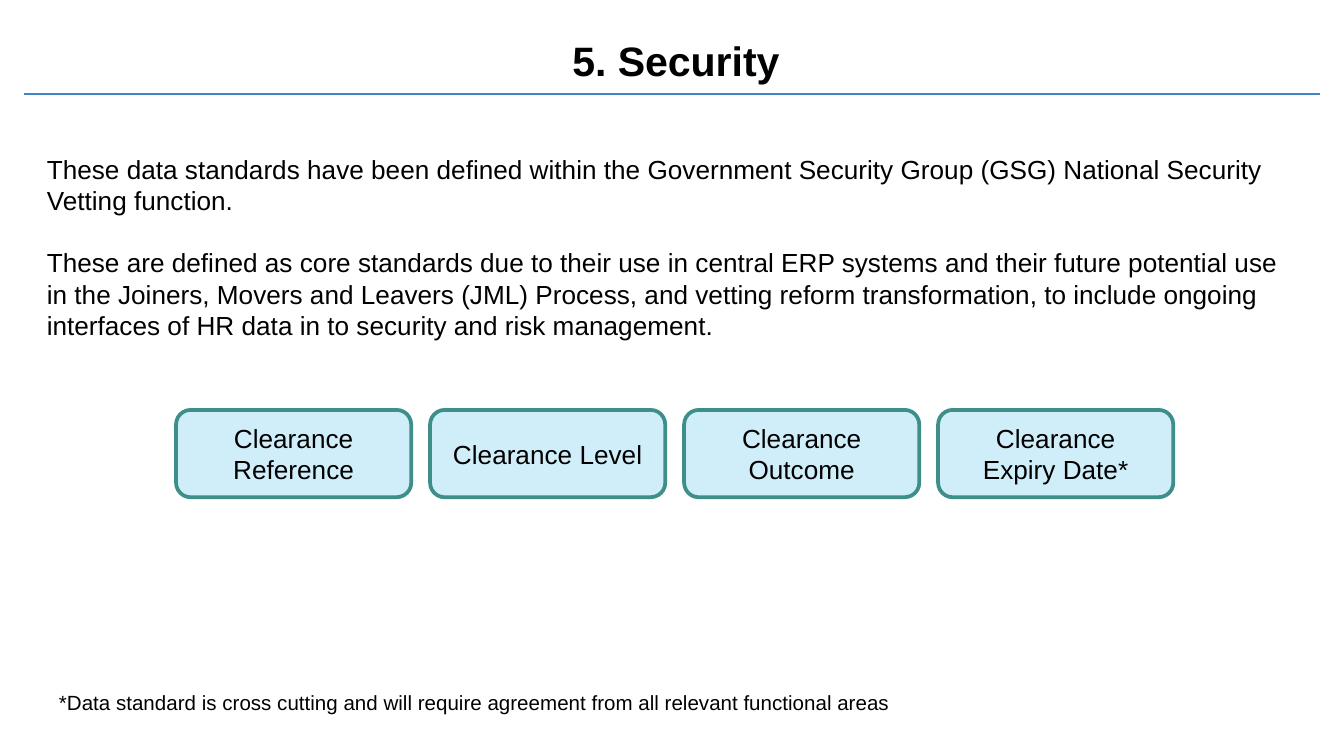
from lxml.etree import SubElement
from pptx import Presentation
from pptx.dml.color import RGBColor
from pptx.enum.shapes import MSO_CONNECTOR as Connector, MSO_SHAPE as Shape
from pptx.enum.text import MSO_ANCHOR as Anchor, PP_ALIGN as Align
from pptx.oxml.ns import qn
from pptx.util import Inches, Pt

BLACK, RULE_BLUE = "000000", "3D85C6"
CARD_FILL, CARD_EDGE = "D0EEF9", "3E8E8A"

INTRO = [
    "These data standards have been defined within the Government Security "
    "Group (GSG) National Security Vetting function.",
    "These are defined as core standards due to their use in central ERP "
    "systems and their future potential use in the Joiners, Movers and Leavers "
    "(JML) Process, and vetting reform transformation, to include ongoing "
    "interfaces of HR data in to security and risk management.",
]
FOOTNOTE = ("*Data standard is cross cutting and will require agreement from "
            "all relevant functional areas")
STANDARDS = ["Clearance Reference", "Clearance Level",
             "Clearance Outcome", "Clearance Expiry Date*"]


def color(hex_code):
    return RGBColor.from_string(hex_code)


def write(frame, paragraphs, size, align=Align.LEFT, anchor=Anchor.TOP,
          margins=(0.1, 0.1), bold=False, gap=0):
    side, edge = (Inches(margin) for margin in margins)
    frame_format = {"word_wrap": True, "vertical_anchor": anchor,
                    "margin_left": side, "margin_right": side,
                    "margin_top": edge, "margin_bottom": edge}
    for name, value in frame_format.items():
        setattr(frame, name, value)
    font_format = {"name": "Arial", "size": Pt(size), "bold": bold}
    for index, text in enumerate(paragraphs):
        paragraph = frame.add_paragraph() if index else frame.paragraphs[0]
        paragraph.alignment = align
        if index:
            paragraph.space_before = Pt(gap)
        run = paragraph.add_run()
        run.text = text
        for name, value in font_format.items():
            setattr(run.font, name, value)
        run.font.color.rgb = color(BLACK)


def add_text(slide, box, paragraphs, size, **options):
    textbox = slide.shapes.add_textbox(*map(Inches, box))
    write(textbox.text_frame, paragraphs, size, **options)


def add_rule(slide, left, right, y):
    rule = slide.shapes.add_connector(
        Connector.STRAIGHT, Inches(left), Inches(y), Inches(right), Inches(y))
    rule.line.color.rgb = color(RULE_BLUE)
    rule.line.width = Pt(1.5)
    SubElement(rule._element.spPr, qn("a:effectLst"))


def add_card(slide, box, label):
    card = slide.shapes.add_shape(Shape.ROUNDED_RECTANGLE, *map(Inches, box))
    card.shadow.inherit = False
    card.fill.solid()
    card.fill.fore_color.rgb = color(CARD_FILL)
    card.line.color.rgb = color(CARD_EDGE)
    card.line.width = Pt(2)
    write(card.text_frame, [label], 14, align=Align.CENTER,
          anchor=Anchor.MIDDLE, margins=(0.12, 0.05))


def main():
    deck = Presentation()
    # Widescreen, 16:9
    deck.slide_width = Inches(10)
    deck.slide_height = deck.slide_width * 9 // 16
    slide = deck.slides.add_slide(deck.slide_layouts[6])

    # Heading and its rule
    add_rule(slide, 0.18, 9.82, 0.7)
    add_text(slide, (0.33, 0.15, 9.4, 0.59), ["5. Security"], 22, bold=True,
             align=Align.CENTER, anchor=Anchor.MIDDLE, margins=(0.07, 0.04))

    # Introduction
    add_text(slide, (0.25, 1.04, 9.55, 1.62), INTRO, 14, gap=16.5)

    # Row of data standards
    card_width, card_gap = 1.75, 0.14
    for column, label in enumerate(STANDARDS):
        left = 1.31 + column * (card_width + card_gap)
        add_card(slide, (left, 3.05, card_width, 0.65), label)

    # Footnote
    add_text(slide, (0.34, 5.04, 8.22, 0.39), [FOOTNOTE], 11)

    deck.save("out.pptx")


if __name__ == "__main__":
    main()
